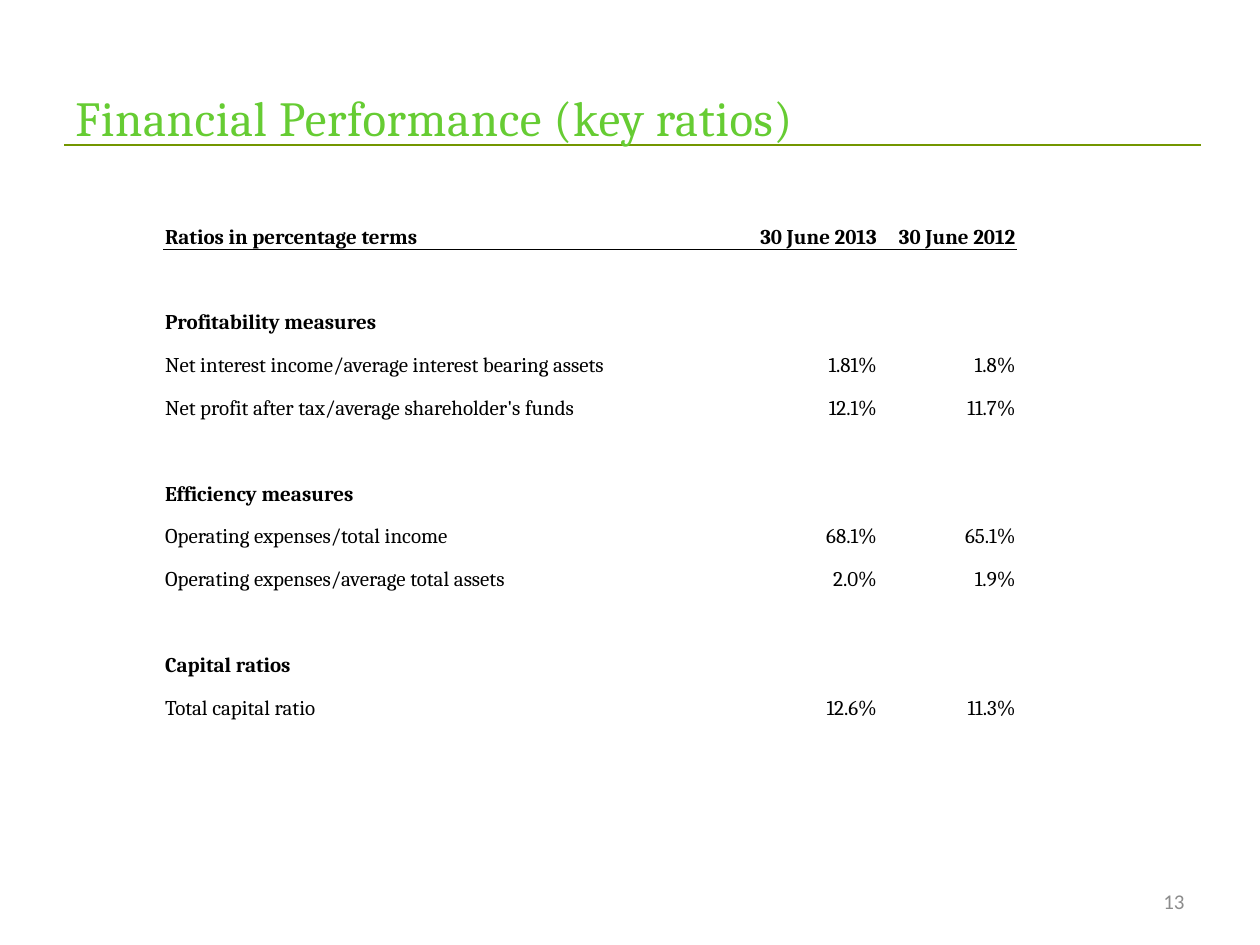
from lxml import etree
from pptx import Presentation
from pptx.dml.color import RGBColor
from pptx.enum.shapes import MSO_CONNECTOR
from pptx.enum.text import MSO_ANCHOR, PP_ALIGN
from pptx.oxml.ns import qn
from pptx.util import Inches, Pt

STRAIGHT = MSO_CONNECTOR.STRAIGHT
MIDDLE, BOTTOM = MSO_ANCHOR.MIDDLE, MSO_ANCHOR.BOTTOM
LEFT, RIGHT = PP_ALIGN.LEFT, PP_ALIGN.RIGHT


def color(hex_string):
    return RGBColor.from_string(hex_string)


def write(frame, text, size, font, ink, align=LEFT, bold=False):
    frame.text = text
    paragraph = frame.paragraphs[0]
    paragraph.alignment = align
    for run in paragraph.runs:
        run.font.size = Pt(size)
        run.font.name = font
        run.font.bold = bold
        run.font.color.rgb = color(ink)


prs = Presentation()
prs.slide_width = Inches(10)
prs.slide_height = Inches(7.5)
slide = prs.slides.add_slide(prs.slide_layouts[6])

title_rule = slide.shapes.add_connector(
    STRAIGHT, Inches(0.51), Inches(1.15), Inches(9.53), Inches(1.15))
title_rule.line.color.rgb = color("739600")
title_rule.line.width = Pt(0.75)
etree.SubElement(title_rule._element.spPr, qn("a:effectLst"))

title = slide.shapes.add_textbox(Inches(0.5), Inches(0.3), Inches(9), Inches(1.25)).text_frame
title.word_wrap = True
title.vertical_anchor = MIDDLE
write(title, "Financial Performance (key ratios)", 28, "Cambria", "66CC33")
title.paragraphs[0].runs[0].font._element.set("spc", "40")

ratios = [
    ("Ratios in percentage terms", "30 June 2013", "30 June 2012"),
    (),
    ("Profitability measures",),
    ("Net interest income/average interest bearing assets", "1.81%", "1.8%"),
    ("Net profit after tax/average shareholder's funds", "12.1%", "11.7%"),
    (),
    ("Efficiency measures",),
    ("Operating expenses/total income", "68.1%", "65.1%"),
    ("Operating expenses/average total assets", "2.0%", "1.9%"),
    (),
    ("Capital ratios",),
    ("Total capital ratio", "12.6%", "11.3%"),
    (),
]
column_widths = [4.41, 0.24, 1.02, 1.1]
header_height, row_height = 0.51, 0.34
table_height = header_height + row_height * (len(ratios) - 1)

table = slide.shapes.add_table(
    len(ratios), len(column_widths), Inches(1.3), Inches(1.47),
    Inches(sum(column_widths)), Inches(table_height)).table
table.first_row = False
table.horz_banding = False
for column, width in zip(table.columns, column_widths):
    column.width = Inches(width)

for row_index, entries in enumerate(ratios):
    table.rows[row_index].height = Inches(row_height if row_index else header_height)
    bold = row_index == 0 or len(entries) == 1
    texts = dict(zip((0, 2, 3), entries))
    for column_index in range(len(column_widths)):
        cell = table.cell(row_index, column_index)
        cell.margin_left = cell.margin_right = cell.margin_top = Inches(0.01)
        cell.margin_bottom = 0
        cell.vertical_anchor = BOTTOM
        if column_index in texts:
            write(cell.text_frame, texts[column_index], 12, "Cambria", "000000",
                  RIGHT if column_index else LEFT, bold)
        if row_index < 2:
            edge = "a:lnT" if row_index else "a:lnB"
            border = etree.SubElement(cell._tc.get_or_add_tcPr(), qn(edge), w=str(Pt(0.5)))
            border_fill = etree.SubElement(border, qn("a:solidFill"))
            etree.SubElement(border_fill, qn("a:srgbClr"), val="000000")
        cell.fill.background()

page_number = slide.shapes.add_textbox(
    Inches(7.17), Inches(6.95), Inches(2.33), Inches(0.4)).text_frame
page_number.word_wrap = True
page_number.vertical_anchor = MIDDLE
write(page_number, "13", 12, "Calibri", "8C8C8C", RIGHT)

prs.save("out.pptx")
